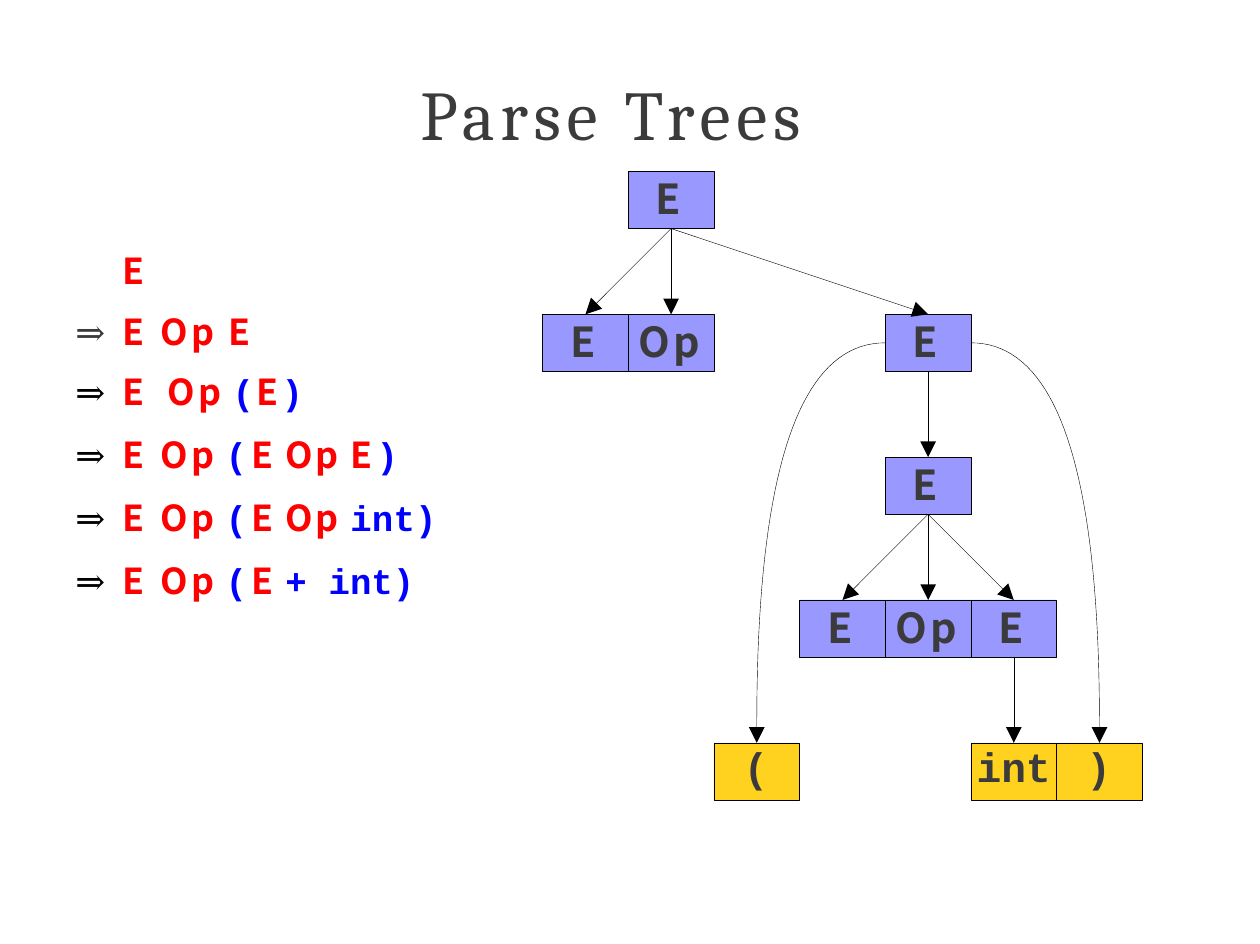
"""Build the slide that sets a derivation beside its parse tree."""
from lxml import etree
from pptx import Presentation
from pptx import util as u
from pptx.dml.color import RGBColor
from pptx.enum import shapes, text
from pptx.oxml.ns import qn

INK = RGBColor(0x3B, 0x3B, 0x3B)
BLACK = RGBColor(0, 0, 0)
RED = RGBColor(0xFF, 0, 0)
BLUE = RGBColor(0, 0, 0xFF)
LILAC = RGBColor(0x98, 0x98, 0xFF)
GOLD = RGBColor(0xFF, 0xD2, 0x1F)
SERIF, SANS, MONO = "Cambria", "Noto Sans CJK KR", "Courier New"
CELL_WIDTH, CELL_HEIGHT = 0.75, 0.5
TOP, BOTTOM = 0, 2
CURVE_STEPS = 40

GAP = (" ", 0)
E, OP = ("E", 5.2), ("Op", 2)
START = [E, GAP, OP, GAP, ("(", 2.5), ("E", 2.5), GAP]
DERIVATION = [
    (0, None, [E]),
    (11.1, INK, [E, GAP, ("Op ", 2), E]),
    (11.1, BLACK, [E, (" ", 4.4), OP, GAP, ("(", 1.7), ("E", 1.7), (")", 1.7)]),
    (12.5, BLACK, [*START, OP, GAP, ("E", 2.6), (")", 2.6)]),
    (12.5, BLACK, [*START, OP, GAP, ("int)", 0.1)]),
    (12.5, BLACK, [*START, ("+ ", 0.1), ("int)", 0)]),
]
NODES = {
    "root": ("E", 5.5, 1.5), "left": ("E", 4.75, 2.75),
    "op": ("Op", 5.5, 2.75), "right": ("E", 7.75, 2.75),
    "group": ("E", 7.75, 4), "inner left": ("E", 7, 5.25),
    "inner op": ("Op", 7.75, 5.25), "inner right": ("E", 8.5, 5.25),
}
LEAVES = {"open": ("(", 6.25, 6.5), "int": ("int", 8.5, 6.5),
          "close": (")", 9.25, 6.5)}
BRANCHES = [
    ("root", "left"), ("root", "op"), ("root", "right"), ("right", "group"),
    ("group", "inner left"), ("group", "inner op"), ("group", "inner right"),
    ("inner right", "int"),
]
TEXT_INDENT = {"E": 0.24, "Op": 0.09, "(": 0.26, "int": 0.05, ")": 0.26}
TEXT_SPACING = {"E": 5.8, "Op": 2.1, "int": -0.1}


class TreeSlide:
    """Hold the slide and draw its kinds of element in one style."""

    def __init__(self, presentation):
        self.slide = presentation.slides.add_slide(presentation.slide_layouts[1])

    def prepare_frame(self, shape, top_inset):
        frame = shape.text_frame
        frame.auto_size = text.MSO_AUTO_SIZE.NONE
        frame.vertical_anchor = text.MSO_ANCHOR.TOP
        frame.margin_left = frame.margin_right = frame.margin_bottom = 0
        frame.margin_top = u.Inches(top_inset)
        return frame

    def place(self, shape, left, top, width, height):
        shape.left, shape.top = u.Inches(left), u.Inches(top)
        shape.width, shape.height = u.Inches(width), u.Inches(height)

    def indent(self, paragraph, left, first_line=0):
        paragraph.alignment = text.PP_ALIGN.LEFT
        properties = paragraph._p.get_or_add_pPr()
        properties.set("marL", str(u.Inches(left)))
        properties.set("indent", str(u.Inches(first_line)))
        return properties

    def format_run(self, run, name, size, color, bold, spacing):
        run.font.name, run.font.size = name, u.Pt(size)
        run.font.color.rgb, run.font.bold = color, bold
        run.font._element.set("spc", str(round(spacing * 100)))

    def add_run(self, paragraph, words, *style):
        run = paragraph.add_run()
        run.text = words
        self.format_run(run, *style)

    def title(self, pieces):
        shape = self.slide.shapes.title
        self.place(shape, 3.67, 0.61, 3.67, 0.76)
        paragraph = self.prepare_frame(shape, 0.01).paragraphs[0]
        self.indent(paragraph, 0.01)
        for words, spacing in pieces:
            self.add_run(paragraph, words, SERIF, 44, INK, False, spacing)

    def derivation(self, lines):
        shape = self.slide.placeholders[1]
        self.place(shape, 0.65, 2.02, 3.29, 3.26)
        frame = self.prepare_frame(shape, 0.16)
        for number, (space, arrow_color, tokens) in enumerate(lines):
            paragraph = frame.add_paragraph() if number else frame.paragraphs[0]
            properties = self.indent(paragraph, 0.42, -0.41 if arrow_color else 0)
            etree.SubElement(properties, qn("a:buNone"))
            if arrow_color is not None:
                self.add_run(paragraph, "⇒\t", SERIF, 22.5, arrow_color, False, -0.5)
            paragraph.space_before = u.Pt(space)
            for words, spacing in tokens:
                symbol = words.strip() in ("E", "Op", "")
                name, color = (SANS, RED) if symbol else (MONO, BLUE)
                self.add_run(paragraph, words, name, 22.5, color, True, spacing)

    def cell(self, label, left, top, leaf=False):
        shape = self.slide.shapes.add_shape(
            shapes.MSO_SHAPE.RECTANGLE, u.Inches(left), u.Inches(top),
            u.Inches(CELL_WIDTH), u.Inches(CELL_HEIGHT))
        shape.shadow.inherit = False
        shape.fill.solid()
        shape.fill.fore_color.rgb = GOLD if leaf else LILAC
        shape.line.color.rgb, shape.line.width = BLACK, u.Pt(0.25)
        frame = self.prepare_frame(shape, 0.03 if leaf else 0.02)
        frame.text = label
        paragraph = frame.paragraphs[0]
        self.indent(paragraph, TEXT_INDENT[label])
        if leaf:
            paragraph.line_spacing = u.Pt(27.9)
        self.format_run(paragraph.runs[0], MONO if leaf else SANS, 26, INK, True,
                        TEXT_SPACING.get(label, 0))
        return shape

    def finish_arrow(self, shape):
        shape.line.color.rgb, shape.line.width = BLACK, u.Pt(0.25)
        line = shape.element.spPr.find(qn("a:ln"))
        etree.SubElement(line, qn("a:tailEnd"), type="triangle", w="lg", len="lg")

    def arrow(self, parent, child):
        connector = self.slide.shapes.add_connector(
            shapes.MSO_CONNECTOR.STRAIGHT, 0, 0, 0, 0)
        connector.begin_connect(parent, BOTTOM)
        connector.end_connect(child, TOP)
        self.finish_arrow(connector)
        etree.SubElement(connector.element.spPr, qn("a:effectLst"))

    def curved_arrow(self, start_x, end_x, start_y=3, bend_y=6.33, end_y=6.5):
        points = []
        for step in range(1, CURVE_STEPS + 1):
            t = step / CURVE_STEPS
            points.append((u.Inches(start_x + (end_x - start_x) * (2 * t - t * t)),
                           u.Inches(start_y + (bend_y - start_y) * t * t)))
        points.append((u.Inches(end_x), u.Inches(end_y)))
        builder = self.slide.shapes.build_freeform(u.Inches(start_x), u.Inches(start_y))
        builder.add_line_segments(points, close=False)
        shape = builder.convert_to_shape()
        shape.fill.background()
        shape.shadow.inherit = False
        self.finish_arrow(shape)


def main():
    presentation = Presentation()
    presentation.slide_width = u.Inches(11.03)
    presentation.slide_height = u.Inches(8.26)
    tree = TreeSlide(presentation)
    tree.title([("Parse ", 3.6), ("Trees", 3.8)])
    tree.derivation(DERIVATION)
    cells = {name: tree.cell(*node) for name, node in NODES.items()}
    cells.update({name: tree.cell(*leaf, leaf=True) for name, leaf in LEAVES.items()})
    for parent, child in BRANCHES:
        tree.arrow(cells[parent], cells[child])
    for start_x, leaf in ((7.75, "open"), (8.5, "close")):
        tree.curved_arrow(start_x, LEAVES[leaf][1] + CELL_WIDTH / 2)
    presentation.save("out.pptx")


if __name__ == "__main__":
    main()
